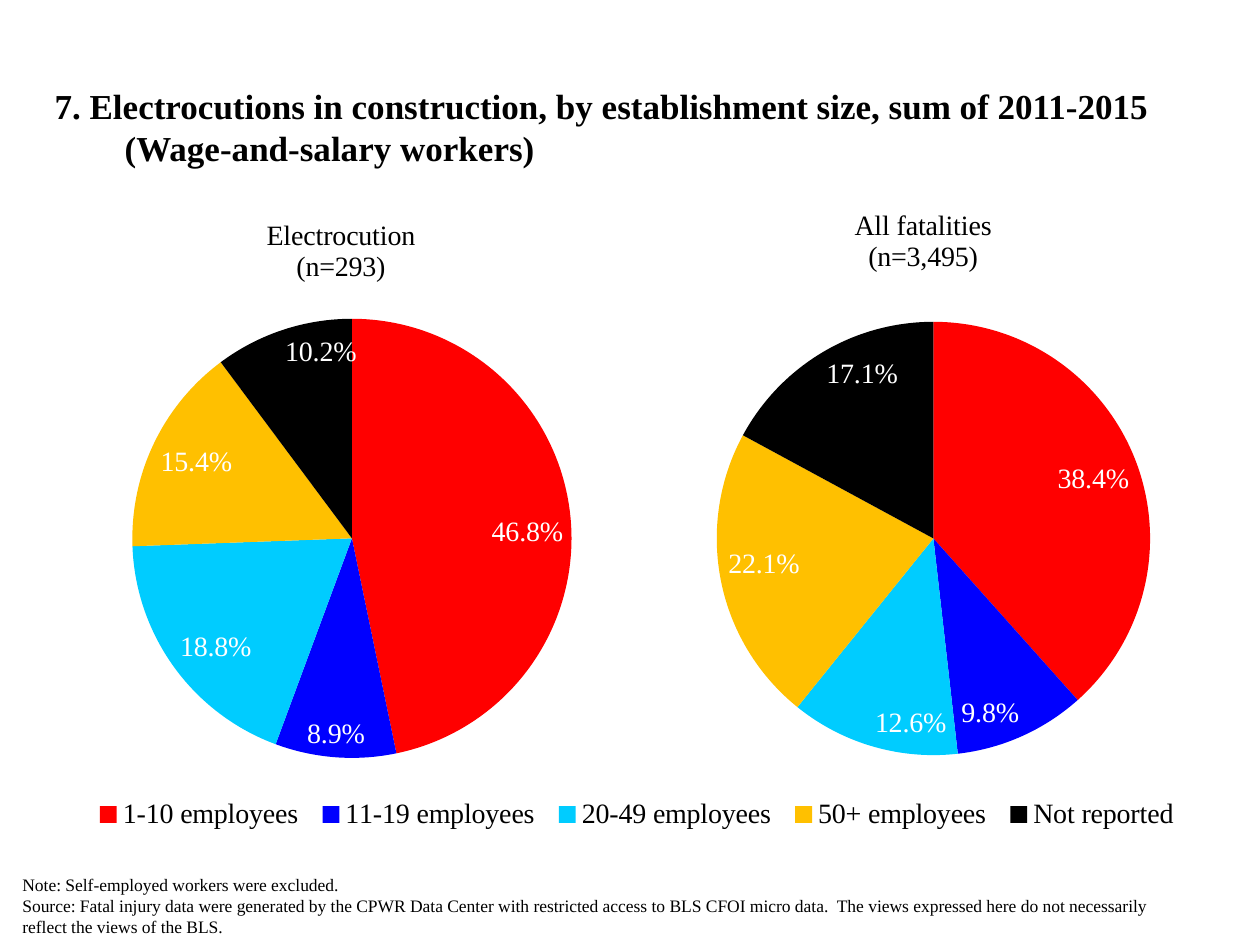
from lxml.etree import SubElement
from pptx import Presentation
from pptx.chart.data import CategoryChartData
from pptx.dml.color import RGBColor
from pptx.enum.chart import XL_CHART_TYPE, XL_LABEL_POSITION, XL_LEGEND_POSITION
from pptx.enum.text import MSO_ANCHOR, PP_ALIGN
from pptx.oxml.ns import qn
from pptx.util import Emu, Pt

COLORS = {"black": "000000", "white": "FFFFFF", "red": "FF0000",
          "blue": "0000FF", "cyan": "00CCFF", "amber": "FFC000"}
SLICES = ["red", "blue", "cyan", "amber", "black"]
SIZES = ["1-10 employees", "11-19 employees", "20-49 employees",
         "50+ employees", "Not reported"]


def px(n):
    return Emu(round(n * 914400 / 126))


def rgb(name):
    return RGBColor.from_string(COLORS[name])


def place(parent, after, inner=False, **box):
    for old in parent.findall(qn("c:layout")):
        parent.remove(old)
    layout = SubElement(parent, qn("c:layout"))
    manual = SubElement(layout, qn("c:manualLayout"))
    if inner:
        SubElement(manual, qn("c:layoutTarget")).set("val", "inner")
    for key in ("x", "y"):
        SubElement(manual, qn(f"c:{key}Mode")).set("val", "edge")
    for key, value in box.items():
        SubElement(manual, qn(f"c:{key}")).set("val", str(value))
    anchor = parent.find(qn(after)) if after else None
    parent.insert(0 if anchor is None else parent.index(anchor) + 1, layout)


class Deck:
    font = "Times New Roman"

    def __init__(self, width, height):
        self.prs = Presentation()
        self.prs.slide_width, self.prs.slide_height = px(width), px(height)
        self.s = self.prs.slides.add_slide(self.prs.slide_layouts[5])

    def style(self, font, size, color="black", bold=False):
        font.name, font.size, font.bold = self.font, Pt(size), bold
        font.color.rgb = rgb(color)

    def fill_text(self, tf, text, size, bold=False):
        tf.text = text
        for p in tf.paragraphs:
            for r in p.runs:
                self.style(r.font, size, bold=bold)

    def title(self, x, y, w, h, text, hang):
        sp = self.s.shapes.title
        sp.left, sp.top, sp.width, sp.height = map(px, (x, y, w, h))
        tf = sp.text_frame
        self.fill_text(tf, text, 20, bold=True)
        tf.word_wrap = True
        tf.vertical_anchor = MSO_ANCHOR.MIDDLE
        p = tf.paragraphs[0]
        p.alignment = PP_ALIGN.LEFT
        pPr = p._p.get_or_add_pPr()
        pPr.set("marL", str(px(hang)))
        pPr.set("indent", str(-px(hang)))

    def text(self, x, y, w, h, text):
        tf = self.s.shapes.add_textbox(*map(px, (x, y, w, h))).text_frame
        tf.word_wrap = True
        self.fill_text(tf, text, 10)

    def pie(self, x, y, w, h, title, title_at, plot, cats, vals, legend=None):
        data = CategoryChartData(number_format="0.0%")
        data.categories = cats
        data.add_series("Series 1", vals)
        chart = self.s.shapes.add_chart(
            XL_CHART_TYPE.PIE, *map(px, (x, y, w, h)), data).chart
        self.style(chart.font, 16)

        chart.has_title = True
        self.fill_text(chart.chart_title.text_frame, title, 16)
        place(chart.chart_title._element, "c:tx", **title_at)

        pie = chart.plots[0]
        pie.vary_by_categories = True
        place(pie._element.getparent(), None, inner=True, **plot)
        series = pie.series[0]
        for i, color in enumerate(SLICES):
            point = series.points[i].format
            point.fill.solid()
            point.fill.fore_color.rgb = rgb(color)
            point.line.fill.background()

        labels = series.data_labels
        labels.show_value = True
        labels.show_percentage = False
        labels.number_format = "0.0%"
        labels.number_format_is_linked = False
        labels.position = XL_LABEL_POSITION.INSIDE_END
        self.style(labels.font, 16, "white")

        chart.has_legend = legend is not None
        if legend:
            chart.legend.position = XL_LEGEND_POSITION.RIGHT
            chart.legend.include_in_layout = False
            self.style(chart.legend.font, 16)
            place(chart.legend._element, "c:legendPos", **legend)


def main():
    deck = Deck(1260, 945)
    deck.title(42, 63, 1166, 126,
               "7. Electrocutions in construction, by establishment size, "
               "sum of 2011-2015 (Wage-and-salary workers)", 70)
    deck.pie(73, 199, 1187, 746, "Electrocution\n(n=293)",
             dict(x=0.16, y=0.02), dict(x=0.05, y=0.16, w=0.37, h=0.59),
             SIZES, [0.468, 0.089, 0.188, 0.154, 0.102],
             legend=dict(x=0.01, y=0.8, w=0.93, h=0.05))
    deck.pie(441, 179, 788, 620, "All fatalities\n(n=3,495)",
             dict(x=0.52, y=0.04), dict(x=0.35, y=0.23, w=0.55, h=0.7),
             ["1", "2", "3", "4", "5"], [0.384, 0.098, 0.126, 0.221, 0.171])
    deck.text(10, 868, 1187, 77,
              "Note: Self-employed workers were excluded.\n"
              "Source: Fatal injury data were generated by the CPWR Data Center "
              "with restricted access to BLS CFOI micro data.  The views "
              "expressed here do not necessarily reflect the views of the BLS.")
    deck.prs.save("out.pptx")


if __name__ == "__main__":
    main()
